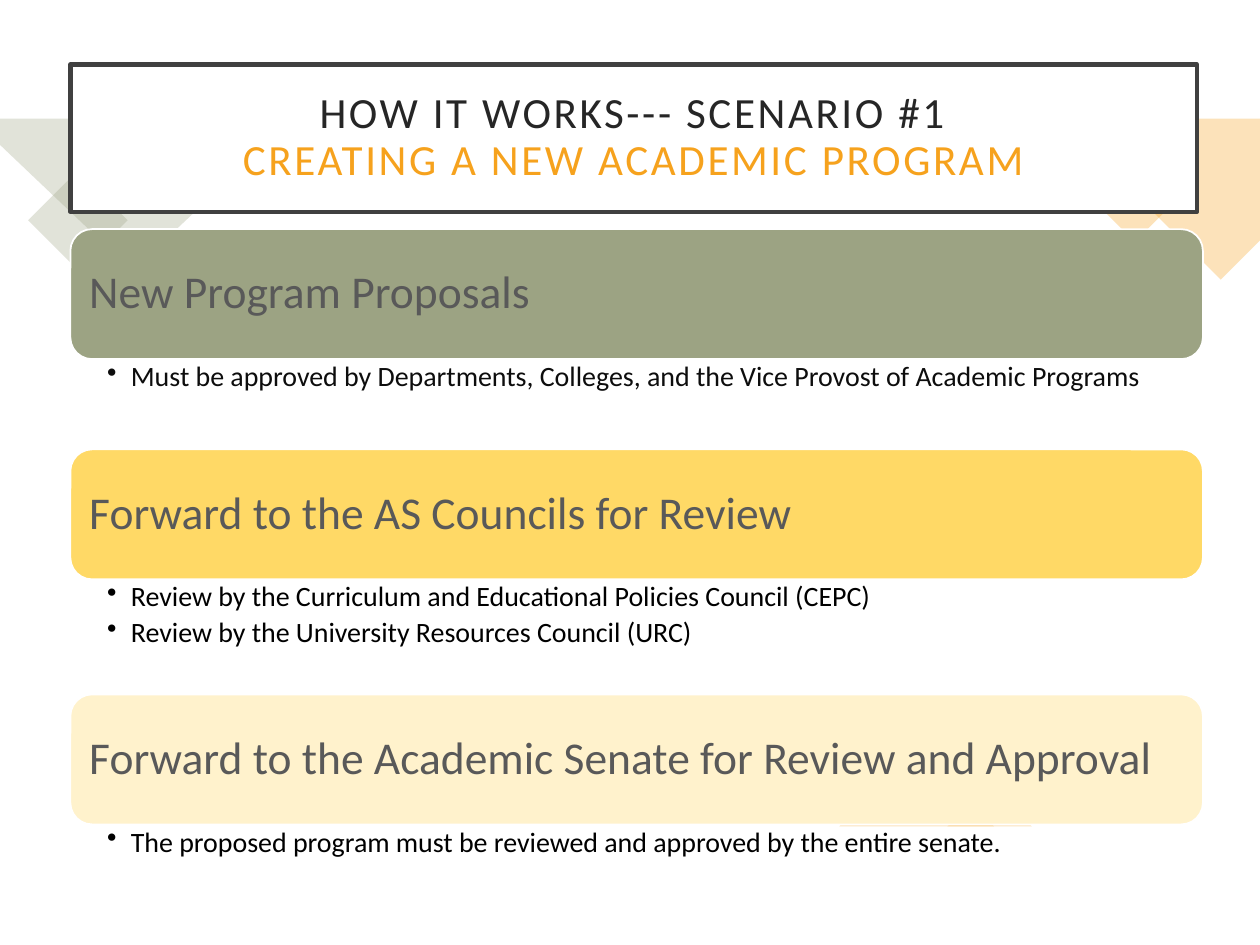
from dataclasses import dataclass

from lxml.etree import SubElement
from pptx import Presentation
from pptx.dml.color import RGBColor
from pptx.enum.shapes import MSO_SHAPE
from pptx.enum.text import MSO_ANCHOR, MSO_AUTO_SIZE, PP_ALIGN
from pptx.oxml.ns import qn
from pptx.util import Cm, Pt

FONT = "Calibri"
SAGE, ORANGE, WHITE = "9CA383", "F6A21D", "FFFFFF"
CARD_LEFT, CARD_WIDTH, CARD_HEIGHT = 1.42, 22.83, 2.62


@dataclass
class Ornament:
    preset: MSO_SHAPE
    left: float
    top: float
    width: float
    height: float
    color: str
    rotation: float = 0


@dataclass
class Outline:
    points: list[tuple[float, float]]
    color: str


@dataclass
class Step:
    top: float
    color: str
    heading: str
    details: list[str]
    detail_height: float
    detail_color: str = "000000"


ORNAMENTS = [
    Outline([(0, 2.39), (5.92, 2.39), (2.67, 5.46), (0, 2.92)], SAGE),
    Ornament(MSO_SHAPE.RECTANGLE, 0.86, 3.73, 1.42, 1.42, SAGE, 45),
    Outline([(22.48, 2.39), (25.4, 2.39), (25.4, 4.85), (24.61, 5.64), (21.92, 2.95)], ORANGE),
    Ornament(MSO_SHAPE.RECTANGLE, 22.2, 3.25, 1.35, 1.35, ORANGE, 45),
    Ornament(MSO_SHAPE.ISOSCELES_TRIANGLE, 16.92, 15.11, 3.12, 1.55, ORANGE),
    Ornament(MSO_SHAPE.ISOSCELES_TRIANGLE, 19.1, 15.82, 1.7, 0.84, ORANGE),
]

STEPS = [
    Step(4.62, SAGE, "New Program Proposals",
         ["Must be approved by Departments, Colleges, and the Vice Provost of Academic Programs"],
         1.4, "0D0D0D"),
    Step(9.06, "FFD966", "Forward to the AS Councils for Review",
         ["Review by the Curriculum and Educational Policies Council (CEPC)",
          "Review by the University Resources Council (URC)"], 1.5),
    Step(14, "FFF2CC", "Forward to the Academic Senate for Review and Approval",
         ["The proposed program must be reviewed and approved by the entire senate."], 0.79),
]


def rgb(color: str) -> RGBColor:
    return RGBColor.from_string(color)


def paint(shape, color: str, line: str | None = None, width: float = 1, opacity: int = 100) -> None:
    shape.shadow.inherit = False
    shape.fill.solid()
    shape.fill.fore_color.rgb = rgb(color)
    if opacity < 100:
        solid = shape.element.spPr.find(qn("a:solidFill"))
        SubElement(solid[0], qn("a:alpha"), val=str(opacity * 1000))
    if line:
        shape.line.color.rgb = rgb(line)
        shape.line.width = Pt(width)
    else:
        shape.line.fill.background()


def add_block(page, preset: MSO_SHAPE, left: float, top: float, width: float, height: float):
    return page.shapes.add_shape(preset, Cm(left), Cm(top), Cm(width), Cm(height))


def draw_ornament(page, item: Ornament | Outline) -> None:
    if isinstance(item, Outline):
        start, *rest = [(Cm(x), Cm(y)) for x, y in item.points]
        builder = page.shapes.build_freeform(*start)
        builder.add_line_segments(rest, close=True)
        shape = builder.convert_to_shape()
    else:
        shape = add_block(page, item.preset, item.left, item.top, item.width, item.height)
        shape.rotation = item.rotation
    paint(shape, item.color, opacity=30)


def set_frame(frame, margin: float, anchor: MSO_ANCHOR) -> None:
    frame.word_wrap = True
    frame.auto_size = MSO_AUTO_SIZE.NONE
    frame.vertical_anchor = anchor
    frame.margin_left = frame.margin_right = Cm(margin)
    frame.margin_top = frame.margin_bottom = Cm(margin)


def set_paragraph(para, size: float, color: str, before: float = 0) -> None:
    para.line_spacing = 0.9
    para.space_before = Pt(before)
    para.font.name = FONT
    para.font.size = Pt(size)
    para.font.color.rgb = rgb(color)


def add_bullet(para) -> None:
    para.level = 1
    properties = para._p.get_or_add_pPr()
    properties.set("marL", str(Cm(0.48)))
    properties.set("indent", str(-Cm(0.48)))
    bullet = properties.makeelement(qn("a:buChar"), {"char": "•"})
    properties.find(qn("a:defRPr")).addprevious(bullet)


def add_text(page, left: float, top: float, width: float, height: float):
    return page.shapes.add_textbox(Cm(left), Cm(top), Cm(width), Cm(height)).text_frame


def draw_step(page, step: Step) -> None:
    card = add_block(page, MSO_SHAPE.ROUNDED_RECTANGLE, CARD_LEFT, step.top, CARD_WIDTH, CARD_HEIGHT)
    paint(card, step.color, WHITE)

    heading = add_text(page, CARD_LEFT + 0.1, step.top, CARD_WIDTH - 0.2, CARD_HEIGHT)
    set_frame(heading, 0.28, MSO_ANCHOR.MIDDLE)
    heading.text = step.heading
    set_paragraph(heading.paragraphs[0], 26, "595959")

    details = add_text(page, 2.11, step.top + CARD_HEIGHT + 0.02, 21.92, step.detail_height)
    set_frame(details, 0.05, MSO_ANCHOR.TOP)
    details.text = "\n".join(step.details)
    for para in details.paragraphs:
        set_paragraph(para, 16, step.detail_color, 3)
        add_bullet(para)


def draw_title(page) -> None:
    title = page.shapes.title
    title.left, title.top, title.width, title.height = Cm(1.42), Cm(1.3), Cm(22.71), Cm(2.97)
    title.element.getparent().append(title.element)
    paint(title, WHITE, "404040", 2.5)
    set_frame(title.text_frame, 0.51, MSO_ANCHOR.MIDDLE)
    para = title.text_frame.paragraphs[0]
    para.alignment = PP_ALIGN.CENTER
    set_paragraph(para, 24.6, "262626")
    first = para.add_run()
    first.text = "HOW IT WORKS--- SCENARIO #1"
    para.add_line_break()
    second = para.add_run()
    second.text = "CREATING A NEW ACADEMIC PROGRAM"
    second.font.color.rgb = rgb(ORANGE)
    for span in (first, second):
        span.font._rPr.set("spc", "150")


def main() -> None:
    deck = Presentation()
    deck.slide_width, deck.slide_height = Cm(25.4), Cm(19.05)
    page = deck.slides.add_slide(deck.slide_layouts[5])
    page.background.fill.solid()
    page.background.fill.fore_color.rgb = rgb("F2F2F2")
    paint(add_block(page, MSO_SHAPE.RECTANGLE, 0, 0, 25.4, 19.05), WHITE)
    for item in ORNAMENTS:
        draw_ornament(page, item)
    draw_title(page)
    for step in STEPS:
        draw_step(page, step)
    deck.save("out.pptx")


if __name__ == "__main__":
    main()
